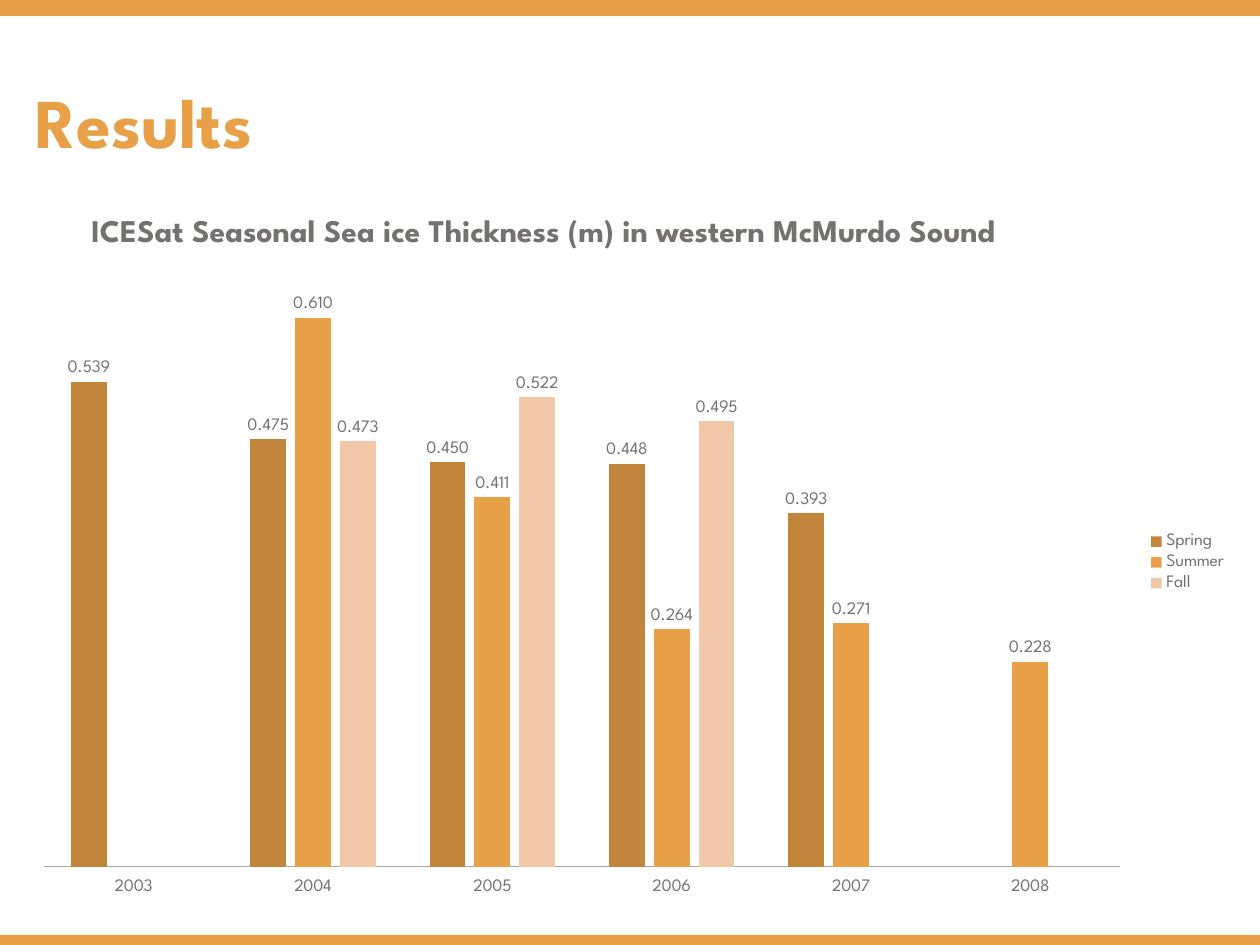
"""Build the sea ice thickness results slide."""
from dataclasses import dataclass
from typing import Optional

from lxml.etree import SubElement
from pptx import Presentation
from pptx.chart.data import CategoryChartData
from pptx.dml.color import RGBColor
from pptx.enum.chart import (XL_CHART_TYPE, XL_LABEL_POSITION, XL_LEGEND_POSITION,
                             XL_TICK_LABEL_POSITION, XL_TICK_MARK)
from pptx.enum.shapes import MSO_SHAPE
from pptx.oxml.ns import qn
from pptx.util import Emu, Pt


@dataclass(frozen=True)
class Theme:
    font: str = "League Spartan"
    accent: str = "E9A149"
    spring: str = "C1863B"
    fall: str = "F0C7A9"
    gray: str = "767171"
    axis: str = "A6A6A6"
    title: int = 40
    heading: int = 18
    chart: int = 10


@dataclass(frozen=True)
class Box:
    x: int
    y: int
    w: int
    h: int

    def emu(self) -> tuple[Emu, ...]:
        return tuple(px(v) for v in (self.x, self.y, self.w, self.h))


@dataclass(frozen=True)
class Season:
    name: str
    color: str
    values: tuple[Optional[float], ...]


THEME = Theme()
WIDTH, HEIGHT = 1260, 945
BANDS = (Box(0, 0, WIDTH, 16), Box(0, 935, WIDTH, 10))
CHART = Box(20, 223, 1220, 679)
PLOT = Box(44, 237, 1076, 630)
YEARS = ("2003", "2004", "2005", "2006", "2007", "2008")
SEASONS = (
    Season("Spring", THEME.spring, (0.539, 0.475, 0.450, 0.448, 0.393, None)),
    Season("Summer", THEME.accent, (None, 0.610, 0.411, 0.264, 0.271, 0.228)),
    Season("Fall", THEME.fall, (None, 0.473, 0.522, 0.495, None, None)),
)


def px(n: int) -> Emu:
    return Emu(round(n * 914400 / 126))


def rgb(color: str) -> RGBColor:
    return RGBColor.from_string(color)


def add_band(s, box: Box) -> None:
    sp = s.shapes.add_shape(MSO_SHAPE.RECTANGLE, *box.emu())
    sp.shadow.inherit = False
    sp.fill.solid()
    sp.fill.fore_color.rgb = rgb(THEME.accent)
    sp.line.fill.background()


def add_text(s, text: str, box: Box, *, size: int, color: str, bold: bool = True,
             before: int = 0, spacing: float = 1.0) -> None:
    tf = s.shapes.add_textbox(*box.emu()).text_frame
    tf.word_wrap = True
    p = tf.paragraphs[0]
    p.space_before, p.line_spacing = Pt(before), spacing
    r = p.add_run()
    r.text = text
    r.font.name, r.font.size, r.font.bold = THEME.font, Pt(size), bold
    r.font.color.rgb = rgb(color)


def set_plot_layout(chart, plot: Box, frame: Box) -> None:
    area = chart.plots[0]._element.getparent()
    layout = area.find(qn("c:layout"))
    if layout is None:
        layout = SubElement(area, qn("c:layout"))
        area.insert(0, layout)
    manual = SubElement(layout, qn("c:manualLayout"))
    settings = {
        "layoutTarget": "inner", "xMode": "edge", "yMode": "edge",
        "x": round((plot.x - frame.x) / frame.w, 4),
        "y": round((plot.y - frame.y) / frame.h, 4),
        "w": round(plot.w / frame.w, 4), "h": round(plot.h / frame.h, 4),
    }
    for tag, value in settings.items():
        SubElement(manual, qn(f"c:{tag}")).set("val", str(value))


def add_season_chart(s, box: Box) -> None:
    data = CategoryChartData(number_format="0.000")
    data.categories = YEARS
    for season in SEASONS:
        data.add_series(season.name, season.values)
    chart = s.shapes.add_chart(XL_CHART_TYPE.COLUMN_CLUSTERED, *box.emu(), data).chart
    chart.has_title = False
    chart.font.name, chart.font.size = THEME.font, Pt(THEME.chart)
    chart.font.color.rgb = rgb(THEME.gray)
    chart.has_legend = True
    chart.legend.position = XL_LEGEND_POSITION.RIGHT
    chart.legend.include_in_layout = False

    years, values = chart.category_axis, chart.value_axis
    years.major_tick_mark = years.minor_tick_mark = XL_TICK_MARK.NONE
    years.tick_label_position = XL_TICK_LABEL_POSITION.LOW
    years.format.line.color.rgb = rgb(THEME.axis)
    years.format.line.width = Pt(0.75)
    values.visible = values.has_major_gridlines = False
    values.minimum_scale, values.maximum_scale = 0, 0.7

    plot = chart.plots[0]
    plot.gap_width, plot.overlap, plot.vary_by_categories = 150, -25, False
    plot.has_data_labels = True
    labels = plot.data_labels
    labels.show_value = True
    labels.number_format, labels.number_format_is_linked = "0.000", False
    labels.position = XL_LABEL_POSITION.OUTSIDE_END
    for series, season in zip(plot.series, SEASONS):
        series.format.fill.solid()
        series.format.fill.fore_color.rgb = rgb(season.color)
    set_plot_layout(chart, PLOT, box)


def main() -> None:
    prs = Presentation()
    prs.slide_width, prs.slide_height = px(WIDTH), px(HEIGHT)
    s = prs.slides.add_slide(prs.slide_layouts[6])
    for band in BANDS:
        add_band(s, band)
    add_text(s, "Results", Box(23, 82, 275, 97), size=THEME.title,
             color=THEME.accent, before=10, spacing=0.9)
    add_season_chart(s, CHART)
    add_text(s, "ICESat Seasonal Sea ice Thickness (m) in western McMurdo Sound",
             Box(79, 205, 1038, 50), size=THEME.heading, color=THEME.gray)
    prs.save("out.pptx")


if __name__ == "__main__":
    main()
